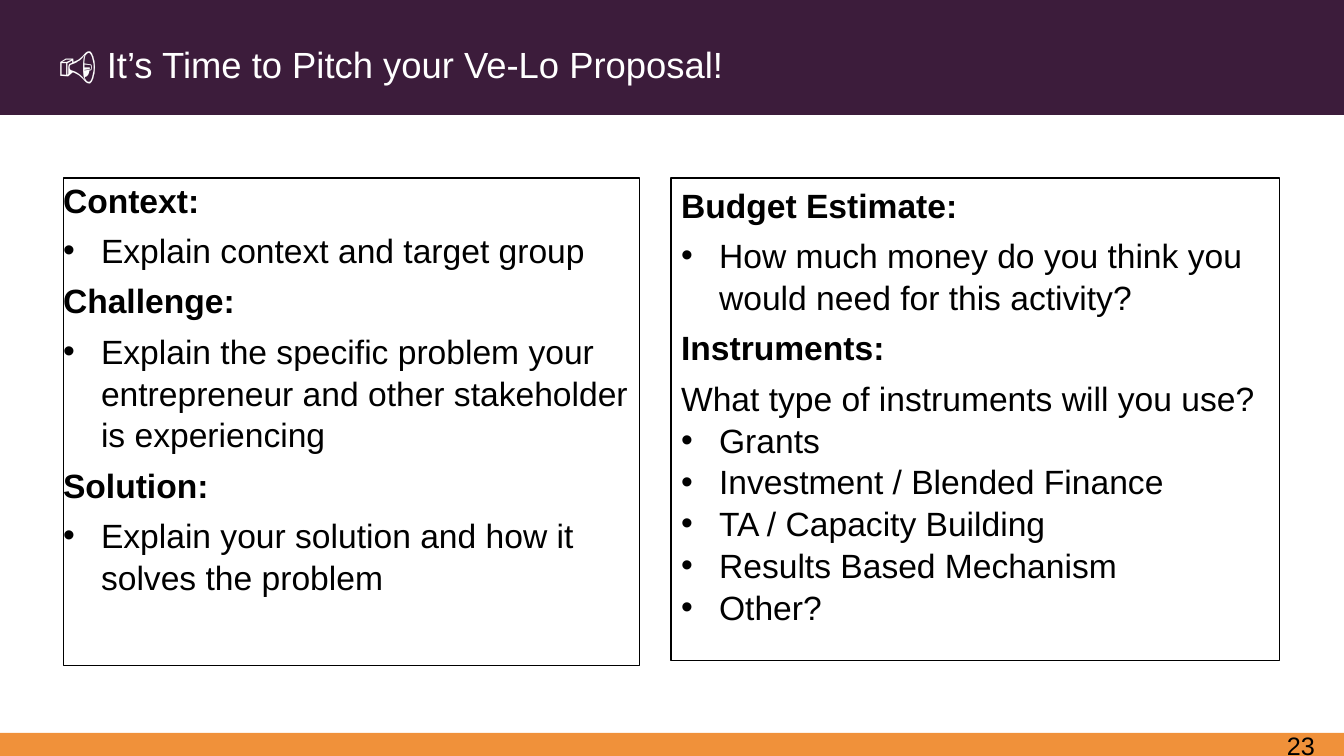
"""Build the pitch briefing slide with two outlined text panels."""
from pptx import Presentation
from pptx.dml.color import RGBColor
from pptx.enum.shapes import MSO_SHAPE as Shape
from pptx.enum.text import MSO_ANCHOR as Anchor, MSO_AUTO_SIZE as AutoSize, PP_ALIGN as Align
from pptx.oxml.ns import qn
from pptx.util import Emu, Pt
from lxml.etree import SubElement

EMU_PER_PX = 914400 / 100.8
FONT = "Arial"
COLORS = {"plum": "3C1C3B", "orange": "F0913A", "white": "FFFFFF", "black": "000000"}
BULLET_INDENT = 38
HEADING, BULLET, PLAIN, TIGHT_BULLET = "heading", "bullet", "plain", "tight bullet"

PITCH = [
    (HEADING, "Context:"),
    (BULLET, "Explain context and target group"),
    (HEADING, "Challenge:"),
    (BULLET, "Explain the specific problem your entrepreneur and other stakeholder is experiencing"),
    (HEADING, "Solution:"),
    (BULLET, "Explain your solution and how it solves the problem"),
]
FUNDING = [
    (HEADING, "Budget Estimate:"),
    (BULLET, "How much money do you think you would need for this activity?"),
    (HEADING, "Instruments:"),
    (PLAIN, "What type of instruments will you use?"),
    (TIGHT_BULLET, "Grants"),
    (TIGHT_BULLET, "Investment / Blended Finance"),
    (TIGHT_BULLET, "TA / Capacity Building"),
    (TIGHT_BULLET, "Results Based Mechanism"),
    (TIGHT_BULLET, "Other?"),
]


def px(length):
    """Turn pixels into EMU."""
    return Emu(round(length * EMU_PER_PX))


def color(name):
    """Look up a named colour."""
    return RGBColor.from_string(COLORS[name])


def place(shape, left, top, width, height):
    """Move and size a shape."""
    shape.left, shape.top, shape.width, shape.height = map(px, (left, top, width, height))


def set_font(para, size, color_name, bold=False):
    """Format a whole paragraph."""
    para.font.name = FONT
    para.font.size = Pt(size)
    para.font.bold = bold
    para.font.color.rgb = color(color_name)


def set_bullet(para, bulleted):
    """Give a paragraph a hanging bullet, or none."""
    properties = para._p.get_or_add_pPr()
    indent = px(BULLET_INDENT) if bulleted else 0
    properties.set("marL", str(indent))
    properties.set("indent", str(-indent))
    if bulleted:
        SubElement(properties, qn("a:buFont"), typeface=FONT)
        SubElement(properties, qn("a:buChar"), char="•")
    else:
        SubElement(properties, qn("a:buNone"))


def add_band(slide, top, height, color_name):
    """Draw a full-width band."""
    band = slide.shapes.add_shape(Shape.RECTANGLE, 0, px(top), px(1344), px(height))
    band.shadow.inherit = False
    band.fill.solid()
    band.fill.fore_color.rgb = color(color_name)
    band.line.fill.background()
    slide.shapes._spTree.insert(2, band._element)


def fill_title(title, text):
    """Place and write the slide title."""
    place(title, 37, 23, 1307, 73)
    frame = title.text_frame
    frame.auto_size = AutoSize.NONE
    frame.vertical_anchor = Anchor.MIDDLE
    frame.margin_left = px(22)
    para = frame.paragraphs[0]
    para.text = text
    para.alignment = Align.LEFT
    para.line_spacing = 1.2
    set_font(para, 26, "white")


def fill_panel(panel, bounds, items, inset=None):
    """Outline a body placeholder and write its list."""
    place(panel, *bounds)
    panel.line.color.rgb = color("black")
    panel.line.width = Pt(0.75)
    frame = panel.text_frame
    frame.auto_size = AutoSize.NONE
    frame.vertical_anchor = Anchor.TOP
    if inset is not None:
        frame.margin_left = frame.margin_top = frame.margin_right = frame.margin_bottom = px(inset)
    for index, (kind, text) in enumerate(items):
        para = frame.add_paragraph() if index else frame.paragraphs[0]
        para.text = text
        set_bullet(para, kind in (BULLET, TIGHT_BULLET))
        para.line_spacing = 1.04
        para.space_before = Pt(6 if index and kind != TIGHT_BULLET else 0)
        set_font(para, 24, "black", kind == HEADING)


def add_page_number(slide, number):
    """Write the page number in the bottom corner."""
    box = slide.shapes.add_textbox(px(1277), px(725), px(60), px(31))
    box.text_frame.word_wrap = True
    para = box.text_frame.paragraphs[0]
    para.text = number
    set_font(para, 18, "black")


def main():
    """Build and save the deck."""
    deck = Presentation()
    deck.slide_width, deck.slide_height = px(1344), px(756)
    slide = deck.slides.add_slide(deck.slide_layouts[3])
    add_band(slide, 733, 23, "orange")
    add_band(slide, 0, 115, "plum")
    title, left_panel, right_panel = slide.placeholders
    fill_title(title, "📢 It’s Time to Pitch your Ve-Lo Proposal!")
    fill_panel(left_panel, (63, 178, 577, 488), PITCH, inset=0)
    fill_panel(right_panel, (671, 178, 609, 483), FUNDING)
    add_page_number(slide, "23")
    deck.save("out.pptx")


if __name__ == "__main__":
    main()
